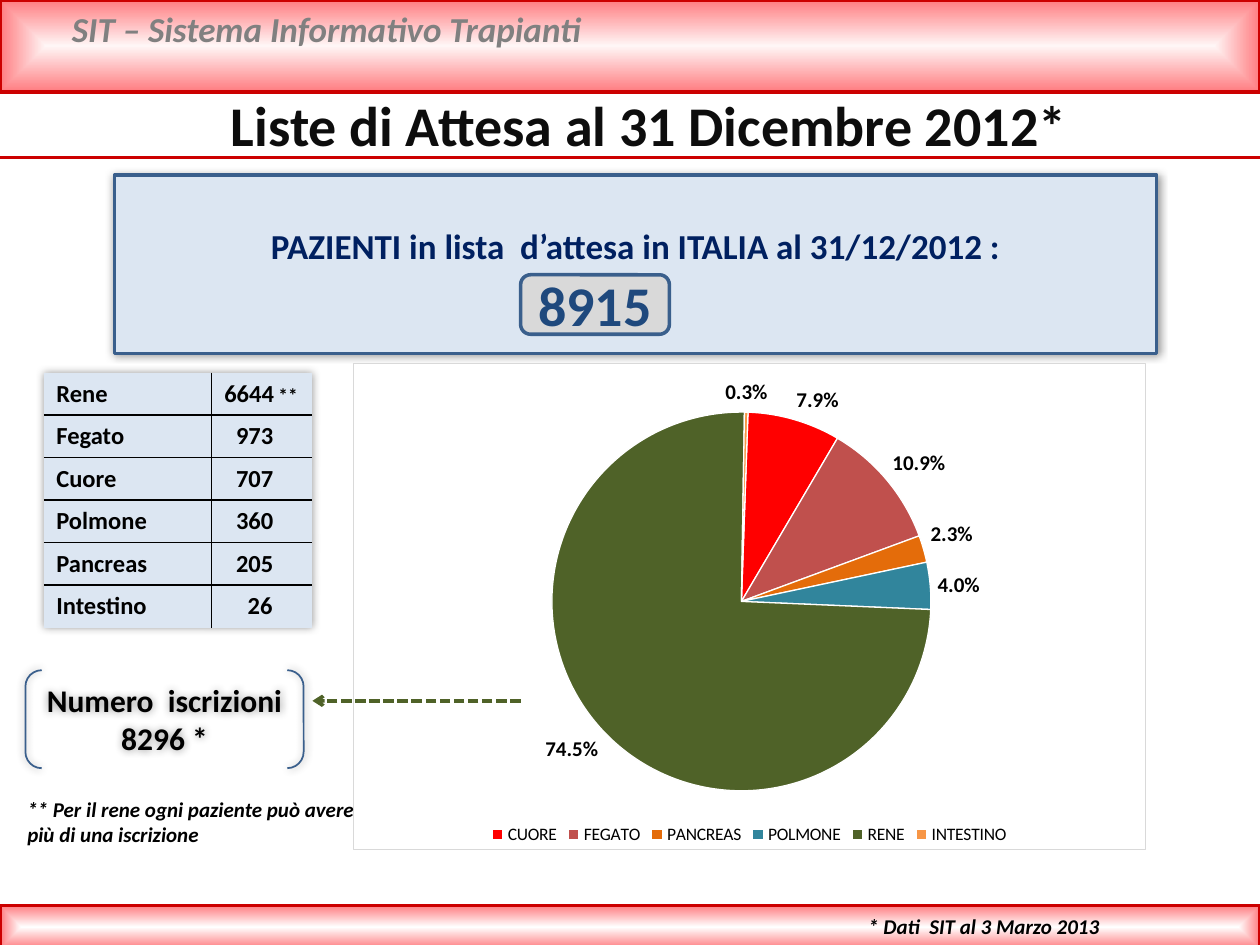
from dataclasses import dataclass

from pptx import Presentation
from pptx.chart.data import CategoryChartData
from pptx.dml.color import RGBColor
from pptx.enum.chart import XL_CHART_TYPE, XL_LABEL_POSITION, XL_LEGEND_POSITION
from pptx.enum.dml import MSO_LINE
from pptx.enum.shapes import MSO_CONNECTOR, MSO_SHAPE
from pptx.enum.text import MSO_ANCHOR, MSO_AUTO_SIZE, PP_ALIGN
from pptx.oxml import parse_xml
from pptx.oxml.ns import nsdecls, qn
from pptx.util import Pt


@dataclass(frozen=True)
class Theme:
    font: str = "Calibri"
    black: str = "000000"
    white: str = "FFFFFF"
    grey: str = "808080"
    title: str = "0D0D0D"
    red: str = "CC0000"
    band_edge: str = "FF7C80"
    band_center: str = "FFF6F6"
    panel: str = "DCE6F2"
    outline: str = "3A5F8C"
    navy: str = "002060"
    badge: str = "D9D9D9"
    badge_text: str = "1F497D"
    green: str = "4F6228"
    slices: tuple = ("FF0000", "C0504D", "E46C0A", "31859C", "4F6228", "F79646")
    title_size: int = 32
    heading_size: int = 20
    callout_size: int = 18
    table_size: int = 14
    note_size: int = 12
    marker_size: int = 11
    legend_size: int = 10


THEME = Theme()

WAITING = [("Rene", "6644"), ("Fegato", "973"), ("Cuore", "707"),
           ("Polmone", "360"), ("Pancreas", "205"), ("Intestino", "26")]
SHARES = [("CUORE", 7.9), ("FEGATO", 10.9), ("PANCREAS", 2.3),
          ("POLMONE", 4.0), ("RENE", 74.5), ("INTESTINO", 0.3)]


def rgb(value):
    return RGBColor.from_string(value)


def points(*lengths):
    return [Pt(length) for length in lengths]


def format_font(font, size, color, **flags):
    values = {"name": THEME.font, "size": Pt(size), "bold": True, **flags}
    for name, value in values.items():
        setattr(font, name, value)
    font.color.rgb = rgb(color)


def write(frame, lines, size, color, align=PP_ALIGN.LEFT, wrap=True,
          anchor=MSO_ANCHOR.TOP, **flags):
    frame.auto_size = MSO_AUTO_SIZE.NONE
    frame.word_wrap = wrap
    frame.vertical_anchor = anchor
    for index, line in enumerate(lines):
        paragraph = frame.add_paragraph() if index else frame.paragraphs[0]
        paragraph.alignment = align
        run = paragraph.add_run()
        run.text = line
        format_font(run.font, size, color, **flags)


def set_line(line, color, width):
    line.color.rgb = rgb(color)
    line.width = Pt(width)


def soft_shadow():
    return parse_xml(
        f'<a:outerShdw {nsdecls("a")} blurRad="63500" dist="0" dir="0">'
        '<a:srgbClr val="000000"><a:alpha val="40000"/></a:srgbClr></a:outerShdw>')


def add_box(slide, kind, place, fill, line, width, shadow=False):
    shape = slide.shapes.add_shape(kind, *points(*place))
    shape.shadow.inherit = False
    if fill:
        shape.fill.solid()
        shape.fill.fore_color.rgb = rgb(fill)
    else:
        shape.fill.background()
    set_line(shape.line, line, width)
    if shadow:
        shape.element.spPr.find(qn("a:effectLst")).append(soft_shadow())
    return shape


def add_band(slide, place, center):
    """Red-edged band whose gradient runs from its center to its sides."""
    band = add_box(slide, MSO_SHAPE.RECTANGLE, place, THEME.band_edge, THEME.red, 2)
    properties = band.element.spPr
    gradient = parse_xml(
        f'<a:gradFill {nsdecls("a")} rotWithShape="1"><a:gsLst>'
        f'<a:gs pos="0"><a:srgbClr val="{center}"/></a:gs>'
        f'<a:gs pos="100000"><a:srgbClr val="{THEME.band_edge}"/></a:gs></a:gsLst>'
        '<a:path path="shape"><a:fillToRect l="50000" t="50000" r="50000" b="50000"/>'
        '</a:path></a:gradFill>')
    properties.replace(properties.find(qn("a:solidFill")), gradient)


def add_note(slide, place, text, size, color):
    box = slide.shapes.add_textbox(*points(*place))
    write(box.text_frame, [text], size, color, italic=True)


def add_line(slide, start, end, color, dashed_arrow=False):
    line = slide.shapes.add_connector(MSO_CONNECTOR.STRAIGHT, *points(*start, *end))
    set_line(line.line, color, 2)
    if dashed_arrow:
        line.line.dash_style = MSO_LINE.SQUARE_DOT
        line.line._get_or_add_ln().append(
            parse_xml(f'<a:tailEnd {nsdecls("a")} type="arrow"/>'))
    line.element.spPr.append(parse_xml(f'<a:effectLst {nsdecls("a")}/>'))


def set_borders(cell, colors):
    """Set the sides in schema order; a color of None hides the side."""
    properties = cell._tc.get_or_add_tcPr()
    for index, (side, color) in enumerate(colors.items()):
        paint = f'<a:solidFill><a:srgbClr val="{color}"/></a:solidFill>' if color else "<a:noFill/>"
        properties.insert(index, parse_xml(
            f'<a:{side} {nsdecls("a")} w="12700">{paint}</a:{side}>'))


def add_waiting_table(slide):
    frame = slide.shapes.add_table(len(WAITING), 2, *points(25, 213, 153.5, 144))
    table = frame.table
    table.first_row = table.horz_banding = False
    effects = parse_xml(f'<a:effectLst {nsdecls("a")}/>')
    effects.append(soft_shadow())
    table._tbl.tblPr.insert(0, effects)
    for column, width in zip(table.columns, (96, 57.5)):
        column.width = Pt(width)
    last = len(WAITING) - 1
    for row, values in enumerate(WAITING):
        for column, value in enumerate(values):
            cell = table.cell(row, column)
            cell.fill.solid()
            cell.fill.fore_color.rgb = rgb(THEME.panel)
            missing_digits = 4 - len(value) if column else 0
            cell.margin_left = Pt(7.2 + 6.7 * missing_digits)
            cell.margin_right = 0
            cell.vertical_anchor = MSO_ANCHOR.MIDDLE
            run = cell.text_frame.paragraphs[0].add_run()
            run.text = value
            format_font(run.font, THEME.table_size, THEME.black)
            set_borders(cell, {"lnL": THEME.black if column else None,
                               "lnR": None if column else THEME.black,
                               "lnT": THEME.black if row else None,
                               "lnB": THEME.black if row < last else None})
    marker = table.cell(0, 1).text_frame.paragraphs[0].add_run()
    marker.text = " **"
    format_font(marker.font, THEME.marker_size, THEME.black)


def add_share_pie(slide):
    data = CategoryChartData()
    data.categories = [name for name, _ in SHARES]
    data.add_series("Series 1", [share for _, share in SHARES])
    chart = slide.shapes.add_chart(
        XL_CHART_TYPE.PIE, *points(201.5, 207.5, 453.5, 278), data).chart
    chart.has_title = False
    format_font(chart.font, THEME.legend_size, THEME.black, bold=False)
    chart.has_legend = True
    chart.legend.position = XL_LEGEND_POSITION.BOTTOM
    chart.legend.include_in_layout = False
    plot = chart.plots[0]
    plot.vary_by_categories = True
    plot.has_data_labels = True
    labels = plot.data_labels
    for name, value in {"show_value": True, "show_percentage": False,
                        "number_format": '0.0"%"', "number_format_is_linked": False,
                        "position": XL_LABEL_POSITION.OUTSIDE_END}.items():
        setattr(labels, name, value)
    format_font(labels.font, THEME.note_size, THEME.black)
    for index, color in enumerate(THEME.slices):
        slice_format = plot.series[0].points[index].format
        slice_format.fill.solid()
        slice_format.fill.fore_color.rgb = rgb(color)
        set_line(slice_format.line, THEME.white, 0.75)

    chart_part = chart.element.find(qn("c:chart"))
    plot_area = chart_part.find(qn("c:plotArea"))
    plot_area.find(qn("c:pieChart")).append(
        parse_xml(f'<c:firstSliceAng {nsdecls("c")} val="2"/>'))
    for layout in plot_area.findall(qn("c:layout")):
        plot_area.remove(layout)
    sizes = "".join(f'<c:{name} val="{value}"/>' for name, value in (
        ("xMode", "edge"), ("yMode", "edge"),
        ("x", 0.25), ("y", 0.1), ("w", 0.48), ("h", 0.78)))
    plot_area.insert(0, parse_xml(
        f'<c:layout {nsdecls("c")}><c:manualLayout><c:layoutTarget val="inner"/>'
        f'{sizes}</c:manualLayout></c:layout>'))
    chart_part.addnext(parse_xml(
        f'<c:spPr {nsdecls("c", "a")}><a:noFill/><a:ln w="6350"><a:solidFill>'
        f'<a:srgbClr val="{THEME.badge}"/></a:solidFill></a:ln></c:spPr>'))


def add_title(slide, text):
    title = slide.shapes.title
    for name, value in zip(("left", "top", "width", "height"), points(82, 48, 578, 46)):
        setattr(title, name, value)
    write(title.text_frame, [text], THEME.title_size, THEME.title, PP_ALIGN.CENTER)


def main():
    presentation = Presentation()
    presentation.slide_width, presentation.slide_height = points(720, 540)
    slide = presentation.slides.add_slide(presentation.slide_layouts[5])

    add_band(slide, (0, 0, 720, 52.5), THEME.band_center)
    add_note(slide, (34, 1, 646, 31.5), "SIT – Sistema Informativo Trapianti",
             THEME.heading_size, THEME.grey)
    add_band(slide, (0, 517.5, 720, 24.5), THEME.white)
    add_line(slide, (0, 90), (720, 90), THEME.red)
    add_note(slide, (489, 518.5, 231, 21.5), "* Dati  SIT al 3 Marzo 2013",
             THEME.note_size, THEME.black)
    add_title(slide, "Liste di Attesa al 31 Dicembre 2012*")

    add_waiting_table(slide)
    panel = add_box(slide, MSO_SHAPE.RECTANGLE, (65.5, 100, 595.5, 102),
                    THEME.panel, THEME.outline, 2, shadow=True)
    panel.text_frame.margin_bottom = Pt(25)
    write(panel.text_frame, ["PAZIENTI in lista  d’attesa in ITALIA al 31/12/2012 :"],
          THEME.heading_size, THEME.navy, PP_ALIGN.CENTER, anchor=MSO_ANCHOR.MIDDLE)
    total = add_box(slide, MSO_SHAPE.ROUNDED_RECTANGLE, (297.5, 157, 85, 34),
                    THEME.badge, THEME.outline, 2)
    write(total.text_frame, ["8915"], THEME.title_size, THEME.badge_text,
          PP_ALIGN.CENTER, anchor=MSO_ANCHOR.MIDDLE)

    add_share_pie(slide)
    callout = add_box(slide, MSO_SHAPE.DOUBLE_BRACKET, (14.5, 383, 159, 56),
                      None, THEME.outline, 1, shadow=True)
    write(callout.text_frame, ["Numero  iscrizioni", "8296 *"], THEME.callout_size,
          THEME.black, PP_ALIGN.CENTER, wrap=False, anchor=MSO_ANCHOR.MIDDLE)
    add_line(slide, (297.5, 400.5), (178.5, 400.5), THEME.green, dashed_arrow=True)
    add_note(slide, (8.5, 451.5, 204, 36),
             "** Per il rene ogni paziente può avere più di una iscrizione",
             THEME.note_size, THEME.black)
    presentation.save("out.pptx")


if __name__ == "__main__":
    main()
